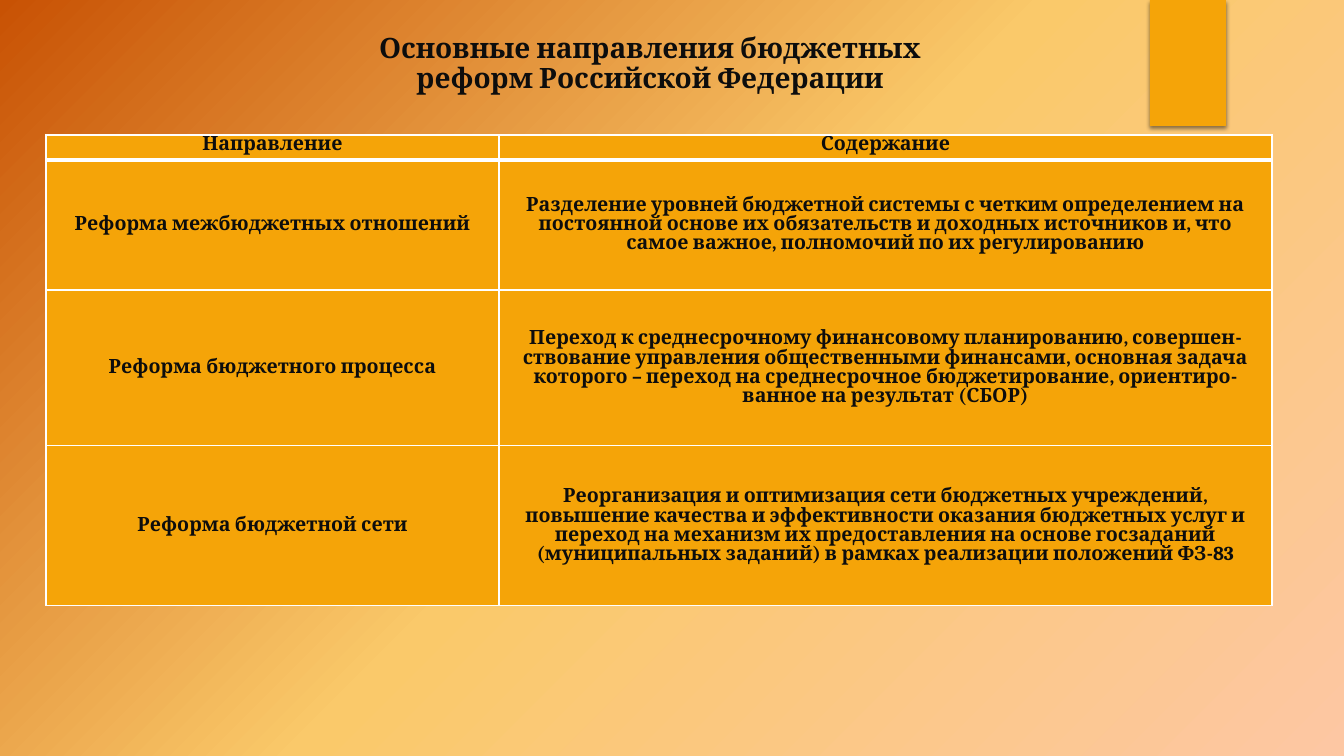
from lxml import etree
from pptx import Presentation
from pptx.dml.color import RGBColor
from pptx.enum.shapes import MSO_SHAPE as SHAPE
from pptx.enum.text import MSO_ANCHOR as ANCHOR, MSO_AUTO_SIZE as AUTO, PP_ALIGN as ALIGN
from pptx.oxml import parse_xml
from pptx.oxml.ns import nsdecls, qn
from pptx.util import Pt

PX = 914400 / 100.8
FONT = "Cambria"
COLORS = {
    "text": "0D0D0D", "cell": "F5A408", "border": "FFFFFF", "shadow": "000000",
    "pink": "FDC7A3", "yellow": "FAC96A", "rust": "C85204",
}
TITLE = "Основные направления бюджетных реформ Российской Федерации"
ROWS = [
    ("Направление", "Содержание"),
    ("Реформа межбюджетных отношений",
     "Разделение уровней бюджетной системы с четким определением на постоянной основе "
     "их обязательств и доходных источников и, что самое важное, полномочий по их регулированию"),
    ("Реформа бюджетного процесса",
     "Переход к среднесрочному финансовому планированию, совершен- ствование управления "
     "общественными финансами, основная задача которого – переход на среднесрочное "
     "бюджетирование, ориентиро- ванное на результат (СБОР)"),
    ("Реформа бюджетной сети",
     "Реорганизация и оптимизация сети бюджетных учреждений, повышение качества и "
     "эффективности оказания бюджетных услуг и переход на механизм их предоставления "
     "на основе госзаданий (муниципальных заданий) в рамках реализации положений ФЗ-83"),
]
COL_WIDTHS = [453, 773]
ROW_HEIGHTS = [25, 130, 156, 160]


def px(n):
    return round(n * PX)


def rgb(name):
    return RGBColor.from_string(COLORS[name])


def path_gradient(stops, focus):
    """Circular gradient; stops are (position %, colour, opacity %)."""
    gs = "".join(
        f'<a:gs pos="{pos * 1000}"><a:srgbClr val="{COLORS[c]}">'
        f'<a:alpha val="{alpha * 1000}"/></a:srgbClr></a:gs>' for pos, c, alpha in stops)
    l, t, r, b = (f * 1000 for f in focus)
    return parse_xml(
        f'<a:gradFill {nsdecls("a")} rotWithShape="1"><a:gsLst>{gs}</a:gsLst>'
        f'<a:path path="circle"><a:fillToRect l="{l}" t="{t}" r="{r}" b="{b}"/></a:path>'
        '</a:gradFill>')


def replace_fill(fill_parent, gradient):
    solid = fill_parent.find(qn("a:solidFill"))
    fill_parent.replace(solid, gradient)


def write(tf, text, size, spacing):
    p = tf.paragraphs[0]
    p.alignment = ALIGN.CENTER
    p.line_spacing = spacing
    r = p.add_run()
    r.text = text
    r.font.name, r.font.size, r.font.bold = FONT, Pt(size), True
    r.font.color.rgb = rgb("text")


def add_background(s):
    fill = s.background.fill
    fill.solid()
    fill.fore_color.rgb = rgb("yellow")
    bg_pr = s.element.find(".//" + qn("p:bgPr"))
    replace_fill(bg_pr, path_gradient(
        [(0, "pink", 100), (50, "yellow", 100), (100, "rust", 97)], (100, 100, 0, 0)))


def add_plain_shape(s, kind, box, color):
    sp = s.shapes.add_shape(kind, *map(px, box))
    sp.shadow.inherit = False
    sp.fill.solid()
    sp.fill.fore_color.rgb = rgb(color)
    sp.line.fill.background()
    return sp


def add_decoration(s, glow_box, tab_box):
    # Faint glow
    glow = add_plain_shape(s, SHAPE.OVAL, glow_box, "yellow")
    replace_fill(glow.element.spPr, path_gradient(
        [(0, "yellow", 7), (36, "yellow", 6), (69, "yellow", 0)], (50, 50, 50, 50)))
    # Corner tab with a soft shadow
    tab = add_plain_shape(s, SHAPE.RECTANGLE, tab_box, "cell")
    effects = tab.element.spPr.find(qn("a:effectLst"))
    effects.append(parse_xml(
        f'<a:outerShdw {nsdecls("a")} blurRad="{Pt(3)}" dist="{Pt(2)}" dir="5400000" '
        f'rotWithShape="0"><a:srgbClr val="{COLORS["shadow"]}"><a:alpha val="45000"/>'
        '</a:srgbClr></a:outerShdw>'))


def add_title(s, box):
    title = s.shapes.title
    title.left, title.top, title.width, title.height = map(px, box)
    tf = title.text_frame
    tf.word_wrap = True
    tf.auto_size = AUTO.NONE
    tf.vertical_anchor = ANCHOR.TOP
    write(tf, TITLE, 20, 0.9)


def set_border(cell, side, width):
    ln = etree.SubElement(cell._tc.get_or_add_tcPr(), qn(f"a:ln{side}"), w=str(Pt(width)))
    fill = etree.SubElement(ln, qn("a:solidFill"))
    etree.SubElement(fill, qn("a:srgbClr"), val=COLORS["border"])


def add_reform_table(s, left, top):
    table = s.shapes.add_table(
        len(ROWS), len(COL_WIDTHS), px(left), px(top),
        px(sum(COL_WIDTHS)), px(sum(ROW_HEIGHTS))).table
    table.first_row = table.horz_banding = False
    for col, width in zip(table.columns, COL_WIDTHS):
        col.width = px(width)
    for i, (row, height) in enumerate(zip(table.rows, ROW_HEIGHTS)):
        row.height = px(height)
        for cell, text in zip(row.cells, ROWS[i]):
            cell.margin_left = cell.margin_right = px(7)
            cell.margin_top = cell.margin_bottom = 0
            cell.vertical_anchor = ANCHOR.MIDDLE if i else ANCHOR.TOP
            # Thick rule between the header and the body
            widths = {"L": 1, "R": 1, "T": 3 if i == 1 else 1, "B": 3 if i == 0 else 1}
            for side, width in widths.items():
                set_border(cell, side, width)
            cell.fill.solid()
            cell.fill.fore_color.rgb = rgb("cell")
            write(cell.text_frame, text, 14, 0.85)


def main():
    prs = Presentation()
    prs.slide_width, prs.slide_height = px(1344), px(756)
    s = prs.slides.add_slide(prs.slide_layouts[5])
    add_background(s)
    add_decoration(s, (949, 184, 310, 310), (1150, 0, 76, 126))
    add_title(s, (314, 29, 672, 78))
    add_reform_table(s, 46, 135)
    prs.save("out.pptx")


if __name__ == "__main__":
    main()
